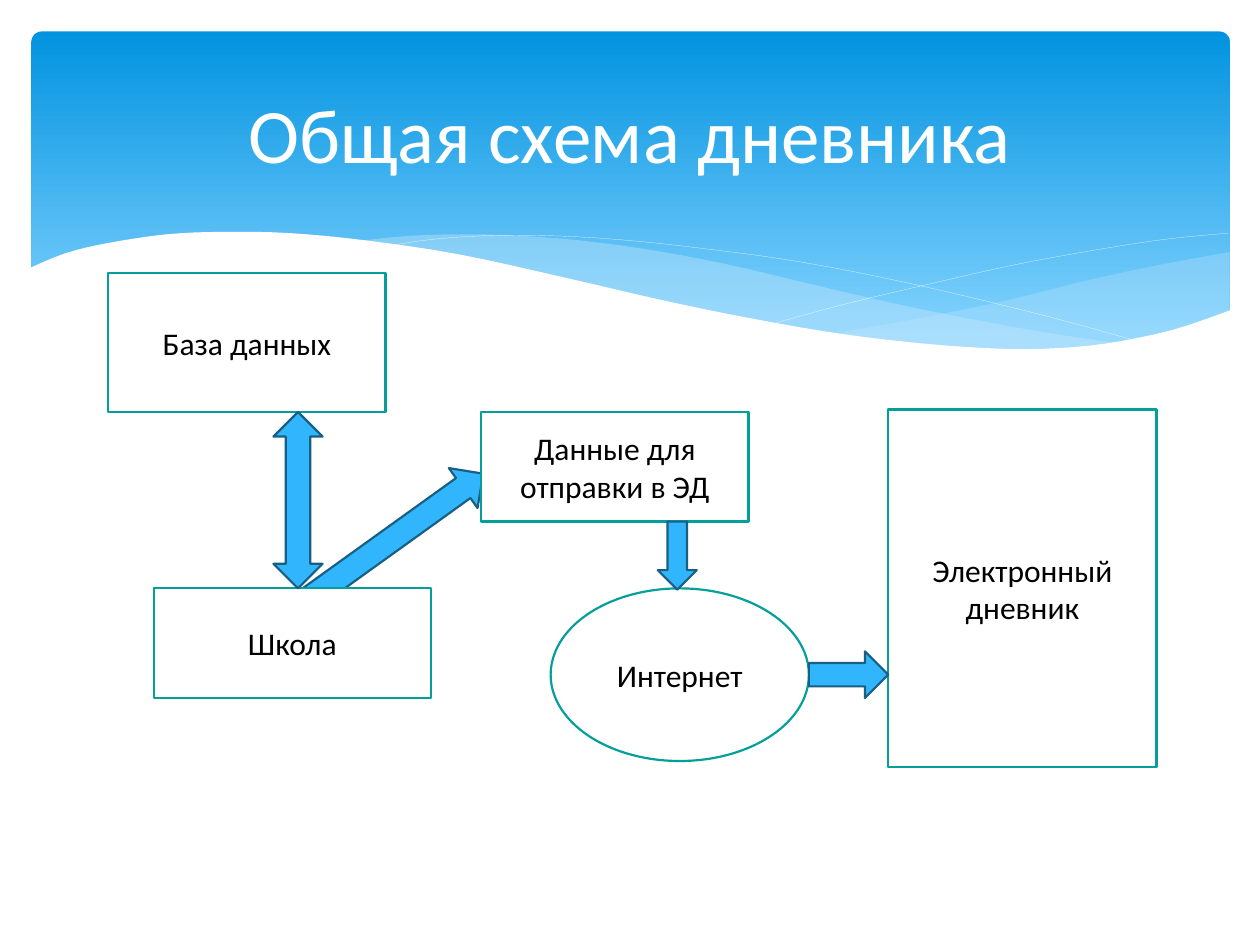
"""Build a slide with a wavy title banner and a data flow scheme."""
from lxml import etree
from pptx import Presentation
from pptx import util as u
from pptx.dml.color import RGBColor
from pptx.enum import shapes, text
from pptx.oxml.ns import qn

KIND = shapes.MSO_SHAPE
MASK = [(-.02, .33), (.27, .21), (.6, .13), (1.07, .06), (1.52, .04), (2.05, .05),
        (2.67, .11), (3.4, .22), (4.22, .4), (5.04, .59), (5.78, .74), (6.43, .85),
        (7.01, .92), (7.53, .96), (7.98, .97), (8.5, .93), (9.05, .82), (9.52, .66)]
RIGHT = [[(9.51, .2), (8.96, .3), (8.36, .43), (7.8, .57), (7.28, .68), (6.81, .77),
          (6.36, .85)],
         [(6.36, .85), (6.8, .91), (7.2, .95), (7.67, .97), (8.1, .97), (8.56, .92),
          (9.1, .82), (9.51, .67)]]
LEFT = [[(2.61, .11), (3.03, .07), (3.55, .06), (4.16, .09), (4.76, .16), (5.44, .28),
         (6.04, .42), (6.81, .6), (7.5, .74), (8.12, .85), (8.68, .93)],
        [(8.68, .93), (8.32, .97), (7.82, .99), (7.23, .96), (6.55, .88), (5.76, .75),
         (5.05, .6), (4.24, .42), (3.58, .27), (2.98, .16), (2.61, .11)]]
FALL = [(2.84, .15), (3.18, .1), (3.62, .07), (4.08, .07), (4.64, .1), (5.31, .17),
        (6.11, .28), (7.02, .46), (8.06, .71), (8.82, .92)]
RISE = [(5.88, .77), (6.47, .61), (7.23, .43), (7.81, .3), (8.41, .19), (8.99, .1),
        (9.5, .05)]


def tint(color, code):
    """Set a colour from a hex string."""
    color.rgb = RGBColor.from_string(code)


def paint(shape, fill=None, line=None, width=1.25):
    """Set solid fill and outline, or none, and drop the shadow."""
    shape.shadow.inherit = False
    if fill:
        shape.fill.solid()
        tint(shape.fill.fore_color, fill)
    else:
        shape.fill.background()
    if line:
        tint(shape.line.color, line)
        shape.line.width = u.Pt(width)
    else:
        shape.line.fill.background()


def write(shape, words, size, code):
    """Put one centred line of text in a shape."""
    frame = shape.text_frame
    frame.word_wrap = True
    frame.vertical_anchor = text.MSO_ANCHOR.MIDDLE
    para = frame.paragraphs[0]
    para.alignment = text.PP_ALIGN.CENTER
    run = para.add_run()
    run.text = words
    run.font.name = "Calibri"
    run.font.size = u.Pt(size)
    tint(run.font.color, code)


def smooth(knots, steps=4):
    """Return points of a smooth curve through the knots."""
    ends = [knots[0], *knots, knots[-1]]
    points = [knots[0]]
    for quad in zip(ends, ends[1:], ends[2:], ends[3:]):
        for step in range(1, steps + 1):
            t = step / steps
            points.append(tuple(
                b + t * (c - a) / 2 + t ** 2 * (2 * a - 5 * b + 4 * c - d) / 2
                + t ** 3 * (3 * b - a - 3 * c + d) / 2
                for a, b, c, d in zip(*quad)))
    return points


def trace(slide, box, points, close=True):
    """Draw an outline through points given from the box corner."""
    spots = [(u.Inches(box[0] + x), u.Inches(box[1] + y)) for x, y in points]
    pen = slide.shapes.build_freeform(*spots[0])
    pen.add_line_segments(spots[1:], close=close)
    return pen.convert_to_shape()


def place(slide, kind, box, spot):
    """Add a preset shape at a spot given from the box corner."""
    x, y, wide, high = spot
    return slide.shapes.add_shape(
        kind, *map(u.Inches, (box[0] + x, box[1] + y, wide, high)))


def waves(slide, box):
    """Draw the waves and the white lower edge of the banner."""
    for pair, alpha in ((RIGHT, 29), (LEFT, 40)):
        wave = trace(slide, box, smooth(pair[0]) + smooth(pair[1]))
        paint(wave, "C6E7FC")
        tone = wave.fill._xPr.find(".//" + qn("a:srgbClr"))
        etree.SubElement(tone, qn("a:alpha"), val=str(alpha * 1000))
    for curve in (FALL, RISE):
        paint(trace(slide, box, smooth(curve), False), None, "FFFFFF", 0.1)
    base = [(9.52, 1.49), (-.02, 1.49)]
    paint(trace(slide, box, smooth(MASK) + base), "FFFFFF")


def banner(slide, box):
    """Draw the gradient banner with its waves."""
    panel = place(slide, KIND.ROUNDED_RECTANGLE, box, (0, 0, *box[2:]))
    panel.adjustments[0] = 0.03
    paint(panel)
    panel.fill.gradient()
    panel.fill.gradient_angle = 270
    stops = zip(panel.fill.gradient_stops, (0, 0.9), ("0293E0", "83D3FE"))
    for stop, share, code in stops:
        stop.position = share
        tint(stop.color, code)
    waves(slide, (box[0], box[1] + 1.55))


def title(slide, box):
    """Write the slide title."""
    label = slide.shapes.add_textbox(*map(u.Inches, box))
    write(label, "Общая схема дневника", 44, "FFFFFF")


def arrow(slide, box, kind, spot, turn=0):
    """Add a block arrow."""
    shape = place(slide, kind, box, spot)
    shape.rotation = turn
    paint(shape, "31B6FD", "195F84")


def flow(slide, box):
    """Draw the scheme of nodes and arrows."""
    arrow(slide, box, KIND.UP_ARROW, (2, 1.19, 0.39, 1.92), 54.3)
    nodes = [
        (KIND.RECTANGLE, (0, 0, 2.2, 1.1), "База данных"),
        (KIND.RECTANGLE, (0.36, 2.5, 2.2, 0.87), "Школа"),
        (KIND.RECTANGLE, (2.96, 1.1, 2.12, 0.87), "Данные для отправки в ЭД"),
        (KIND.OVAL, (3.51, 2.5, 2.05, 1.37), "Интернет"),
        (KIND.RECTANGLE, (6.19, 1.08, 2.13, 2.84), "Электронный дневник")]
    for kind, spot, words in nodes:
        node = place(slide, kind, box, spot)
        paint(node, "FFFFFF", "049E9B")
        write(node, words, 18, "000000")
    arrow(slide, box, KIND.UP_DOWN_ARROW, (1.31, 1.1, 0.39, 1.4))
    arrow(slide, box, KIND.DOWN_ARROW, (4.36, 1.97, 0.31, 0.54))
    arrow(slide, box, KIND.RIGHT_ARROW, (5.56, 3, 0.63, 0.37))


def main():
    """Build and save the slide."""
    deck = Presentation()
    deck.slide_width, deck.slide_height = u.Inches(10), u.Inches(7.5)
    slide = deck.slides.add_slide(deck.slide_layouts[6])
    banner(slide, (0.25, 0.25, 9.51, 2.7))
    title(slide, (0.5, 0.37, 9, 1.37))
    flow(slide, (0.86, 2.17))
    deck.save("out.pptx")


if __name__ == "__main__":
    main()
